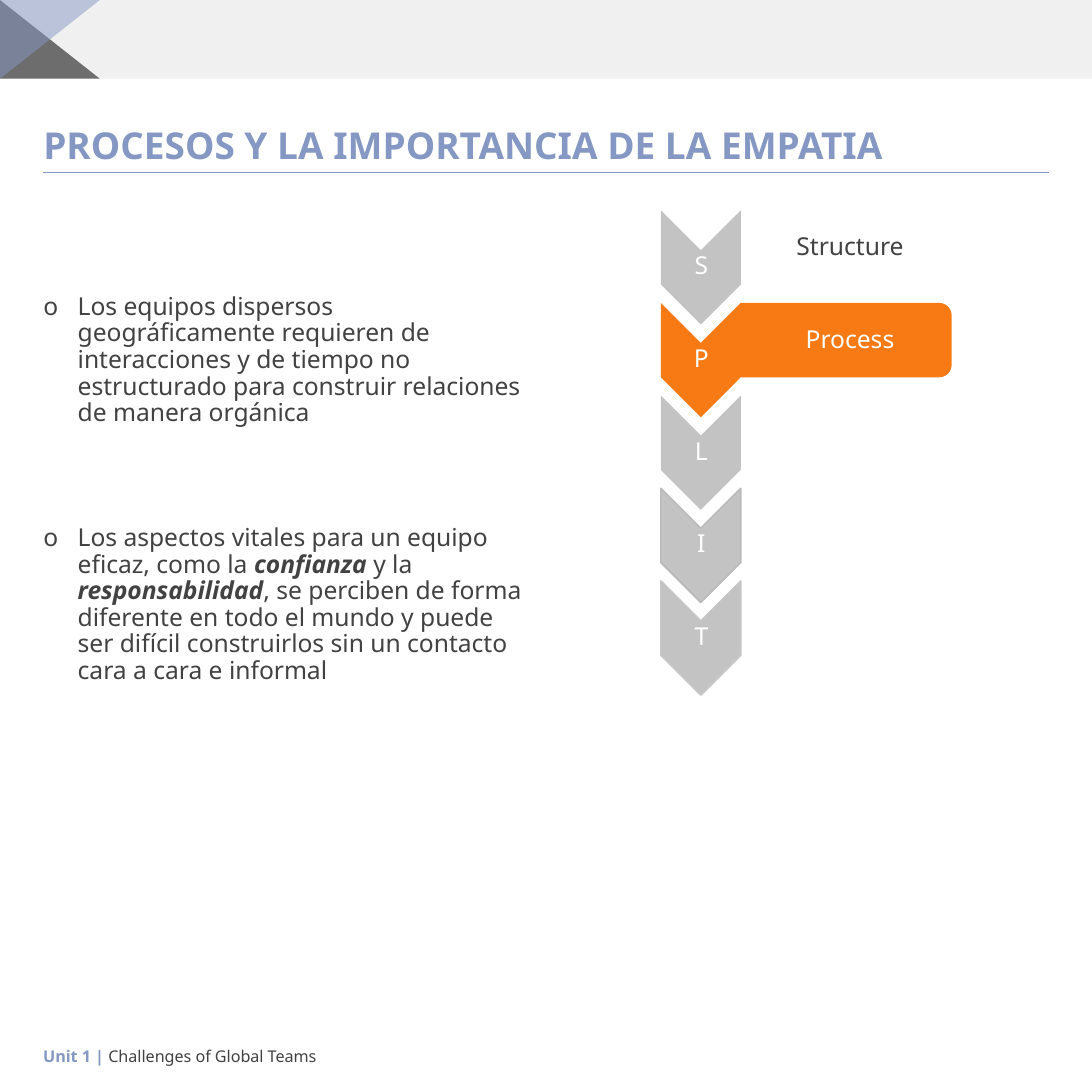
from dataclasses import dataclass

from lxml import etree
from pptx import Presentation
from pptx.dml.color import RGBColor
from pptx.enum.shapes import MSO_CONNECTOR, MSO_SHAPE
from pptx.enum.text import MSO_ANCHOR, MSO_AUTO_SIZE, PP_ALIGN
from pptx.oxml.ns import qn
from pptx.util import Inches, Pt

LEFT, CENTER = PP_ALIGN.LEFT, PP_ALIGN.CENTER
TOP, MIDDLE = MSO_ANCHOR.TOP, MSO_ANCHOR.MIDDLE
NO_FIT = MSO_AUTO_SIZE.NONE
CHEVRON, TAB = MSO_SHAPE.CHEVRON, MSO_SHAPE.ROUND_2_SAME_RECTANGLE
RECTANGLE, STRAIGHT = MSO_SHAPE.RECTANGLE, MSO_CONNECTOR.STRAIGHT

FONT = "Noto Sans"
COLORS = {"blue": "8598C3", "dark": "424242", "gray": "C3C3C3",
          "orange": "F77A15", "white": "FFFFFF",
          "edge": "BABABA", "pale_edge": "C6C6C6"}
SIDE = 9.84
BAND_HEIGHT = 0.71
CORNER_WIDTH = 0.9
STEP_PITCH = 0.835


@dataclass
class Span:
    text: str
    color: str = "dark"
    bold: bool = False
    italic: bool = False


@dataclass
class Step:
    letter: str
    fill: str = "gray"
    edge: str = ""
    label: str = ""
    label_color: str = "dark"


@dataclass
class Corner:
    points: list[tuple[float, float]]
    color: str
    opacity: int


STEPS = [
    Step("S", label="Structure"),
    Step("P", fill="orange", label="Process", label_color="white"),
    Step("L"),
    Step("I", edge="edge"),
    Step("T", edge="pale_edge"),
]
CORNERS = [
    Corner([(0, 0), (CORNER_WIDTH, BAND_HEIGHT), (0, BAND_HEIGHT)], "dark", 75),
    Corner([(0, 0), (CORNER_WIDTH, 0), (0, BAND_HEIGHT)], "blue", 50),
]
BULLETS = [
    [Span("Los equipos dispersos geográficamente requieren de interacciones y de "
          "tiempo no estructurado para construir relaciones de manera orgánica")],
    [Span("Los aspectos vitales para un equipo eficaz, como la "),
     Span("confianza ", bold=True, italic=True),
     Span("y la "),
     Span("responsabilidad", bold=True, italic=True),
     Span(", se perciben de forma diferente en todo el mundo y puede ser difícil "
          "construirlos sin un contacto cara a cara e informal")],
]


def rgb(name: str) -> RGBColor:
    return RGBColor.from_string(COLORS[name])


def place(shape, left: float, top: float, width: float, height: float) -> None:
    shape.left, shape.top = Inches(left), Inches(top)
    shape.width, shape.height = Inches(width), Inches(height)


def add_bullet(paragraph) -> None:
    props = paragraph._p.get_or_add_pPr()
    props.set("marL", str(Inches(0.31)))
    props.set("indent", str(Inches(-0.31)))
    etree.SubElement(props, qn("a:buFont")).set("typeface", FONT)
    etree.SubElement(props, qn("a:buChar")).set("char", "o")


def write(shape, paragraphs: list[list[Span]], *, size: float = 16, align=LEFT,
          anchor=MIDDLE, spacing: float = 0.9, gap: float = 0,
          bullets: bool = False, wrap: bool = True, insets=None) -> None:
    frame = shape.text_frame
    frame.word_wrap, frame.auto_size = wrap, NO_FIT
    frame.vertical_anchor = anchor
    if insets:
        left, others = insets
        frame.margin_left = Inches(left)
        frame.margin_top = frame.margin_right = frame.margin_bottom = Inches(others)
    for index, spans in enumerate(paragraphs):
        paragraph = frame.add_paragraph() if index else frame.paragraphs[0]
        paragraph.alignment, paragraph.line_spacing = align, spacing
        paragraph.space_before = Pt(gap if index else 0)
        if bullets:
            add_bullet(paragraph)
        for span in spans:
            run = paragraph.add_run()
            run.text = span.text
            run.font.name, run.font.size = FONT, Pt(size)
            run.font.bold, run.font.italic = span.bold, span.italic
            run.font.color.rgb = rgb(span.color)


def paint(shape, color: str, opacity: int = 100, edge: str = "") -> None:
    shape.shadow.inherit = False
    shape.fill.solid()
    shape.fill.fore_color.rgb = rgb(color)
    if opacity < 100:
        tint = shape.element.spPr.find(".//" + qn("a:srgbClr"))
        etree.SubElement(tint, qn("a:alpha")).set("val", str(opacity * 1000))
    if edge:
        shape.line.color.rgb, shape.line.width = rgb(edge), Pt(1)
    else:
        shape.line.fill.background()


def add_block(slide, kind, box: tuple, color: str, *, opacity: int = 100,
              edge: str = "", rotation: float = 0) -> None:
    block = slide.shapes.add_shape(kind, *map(Inches, box))
    block.rotation = rotation
    paint(block, color, opacity, edge)


def add_text(slide, box: tuple, spans: list[Span], **text_format) -> None:
    write(slide.shapes.add_textbox(*map(Inches, box)), [spans], **text_format)


def draw_header(slide) -> None:
    add_block(slide, RECTANGLE, (0, 0, SIDE, BAND_HEIGHT), "dark", opacity=8)
    for corner in CORNERS:
        start, *others = [(Inches(x), Inches(y)) for x, y in corner.points]
        builder = slide.shapes.build_freeform(*start)
        builder.add_line_segments(others, close=True)
        paint(builder.convert_to_shape(), corner.color, corner.opacity)
    rule = slide.shapes.add_connector(
        STRAIGHT, Inches(0.39), Inches(1.55), Inches(9.45), Inches(1.55))
    rule.line.color.rgb, rule.line.width = rgb("blue"), Pt(0.5)
    etree.SubElement(rule.element.spPr, qn("a:effectLst"))


def draw_step(slide, step: Step, offset: float) -> None:
    add_block(slide, CHEVRON, (5.8, 2.05 + offset, 1.03, 0.72), step.fill,
              edge=step.edge, rotation=90)
    add_text(slide, (5.96, 2.25 + offset, 0.72, 0.31), [Span(step.letter, "white")],
             align=CENTER, insets=(0.01, 0.01))
    if step.fill == "orange":
        add_block(slide, TAB, (7.29, 1.28 + offset, 0.67, 1.9), step.fill, rotation=90)
    if step.label:
        add_text(slide, (6.67, 1.93 + offset, 1.87, 0.6),
                 [Span(step.label, step.label_color)],
                 align=CENTER, insets=(0.12, 0.01))


def main() -> None:
    deck = Presentation()
    deck.slide_width = deck.slide_height = Inches(SIDE)
    slide = deck.slides.add_slide(deck.slide_layouts[1])

    # Header band, corner triangles and title rule
    draw_header(slide)

    # Title and bullet list
    title, body = slide.shapes.title, slide.placeholders[1]
    place(title, 0.29, 1.1, 9.27, 0.45)
    write(title, [[Span("PROCESOS Y LA IMPORTANCIA DE LA EMPATIA", "blue", bold=True)]],
          size=24)
    place(body, 0.29, 2.6, 4.63, 5.65)
    write(body, BULLETS, anchor=TOP, gap=63.7, bullets=True)

    # SPLIT chevron column
    for index, step in enumerate(STEPS):
        draw_step(slide, step, index * STEP_PITCH)

    # Footer
    add_text(slide, (0.29, 9.38, 2.71, 0.28),
             [Span("Unit 1 | ", "blue", bold=True), Span("Challenges of Global Teams")],
             size=10.5, anchor=TOP, spacing=1, wrap=False)

    deck.save("out.pptx")


if __name__ == "__main__":
    main()
